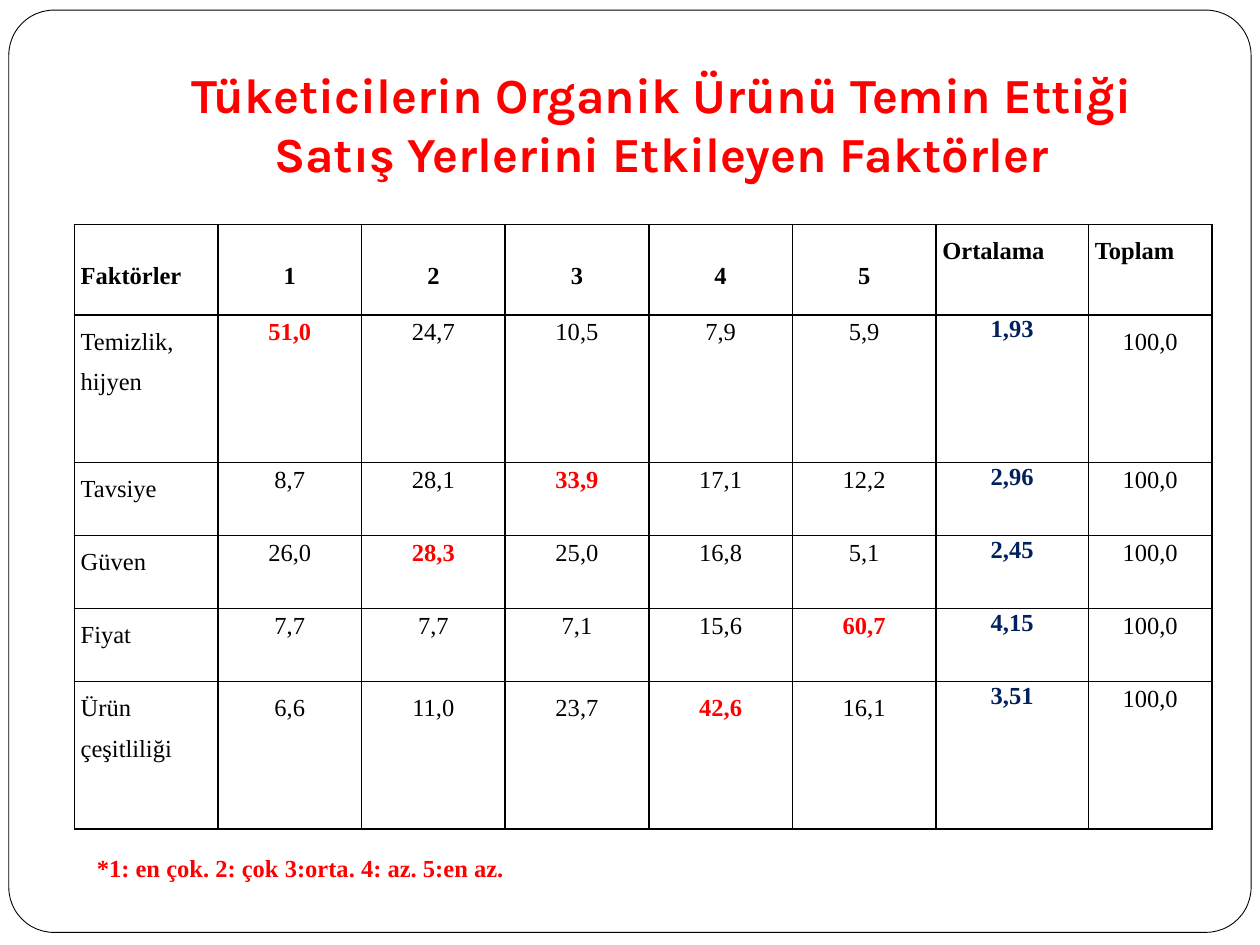
from dataclasses import dataclass

from lxml.etree import SubElement
from pptx import Presentation
from pptx.dml.color import RGBColor
from pptx.enum.shapes import MSO_SHAPE
from pptx.enum.text import MSO_ANCHOR, MSO_AUTO_SIZE, PP_ALIGN
from pptx.oxml.ns import qn
from pptx.util import Inches, Pt


@dataclass(frozen=True)
class Theme:
    black: RGBColor = RGBColor(0x00, 0x00, 0x00)
    white: RGBColor = RGBColor(0xFF, 0xFF, 0xFF)
    red: RGBColor = RGBColor(0xFF, 0x00, 0x00)
    navy: RGBColor = RGBColor(0x00, 0x20, 0x60)
    title_font: str = "Karla"
    body_font: str = "Times New Roman"
    title_size: int = 28
    body_size: int = 14


@dataclass(frozen=True)
class Factor:
    name: str
    shares: tuple[float, ...]
    mean: float
    height: float = 0.58
    share_spacing: float = 1.15
    total_spacing: float = 1.15


@dataclass(frozen=True)
class CellStyle:
    align: PP_ALIGN = PP_ALIGN.CENTER
    spacing: float | Pt = 1.5
    color: RGBColor = Theme.black
    bold: bool = False
    anchor: MSO_ANCHOR = MSO_ANCHOR.TOP
    filled: bool = False


THEME = Theme()
HEADERS = ("Faktörler", "1", "2", "3", "4", "5", "Ortalama", "Toplam")
COL_WIDTHS = (1.14,) * 6 + (1.21, 0.98)
HEADER_HEIGHT = 0.72
FACTORS = (
    Factor("Temizlik, hijyen", (51.0, 24.7, 10.5, 7.9, 5.9), 1.93,
           height=1.17, total_spacing=1.5),
    Factor("Tavsiye", (8.7, 28.1, 33.9, 17.1, 12.2), 2.96),
    Factor("Güven", (26.0, 28.3, 25.0, 16.8, 5.1), 2.45),
    Factor("Fiyat", (7.7, 7.7, 7.1, 15.6, 60.7), 4.15),
    Factor("Ürün çeşitliliği", (6.6, 11.0, 23.7, 42.6, 16.1), 3.51,
           height=1.17, share_spacing=1.5),
)


def decimal_comma(value: float, digits: int = 1) -> str:
    return f"{value:.{digits}f}".replace(".", ",")


def format_runs(p, font: str, size: int, color: RGBColor, bold: bool) -> None:
    for r in p.runs:
        r.font.name = font
        r.font.size = Pt(size)
        r.font.color.rgb = color
        r.font.bold = bold


def add_borders(cell) -> None:
    """Draw a 1 pt black line on all four sides; the lines precede the fill."""
    tc_pr = cell._tc.get_or_add_tcPr()
    for i, side in enumerate(("lnL", "lnR", "lnT", "lnB")):
        ln = SubElement(tc_pr, qn(f"a:{side}"), w=str(Pt(1)))
        fill = SubElement(ln, qn("a:solidFill"))
        SubElement(fill, qn("a:srgbClr"), val=str(THEME.black))
        tc_pr.insert(i, ln)


def write_cell(cell, text: str, style: CellStyle) -> None:
    cell.margin_left = cell.margin_right = Inches(0.05)
    cell.margin_top = cell.margin_bottom = 0
    cell.vertical_anchor = style.anchor
    if style.filled:
        cell.fill.solid()
        cell.fill.fore_color.rgb = THEME.white
    else:
        cell.fill.background()
    add_borders(cell)
    p = cell.text_frame.paragraphs[0]
    p.text = text
    p.alignment = style.align
    p.line_spacing = style.spacing
    p.space_after = Pt(10)
    format_runs(p, THEME.body_font, THEME.body_size, style.color, style.bold)


def write_header(table) -> None:
    for col, text in enumerate(HEADERS):
        write_cell(table.cell(0, col), text, CellStyle(
            align=PP_ALIGN.CENTER if text.isdigit() else PP_ALIGN.JUSTIFY,
            anchor=MSO_ANCHOR.MIDDLE if col < 6 else MSO_ANCHOR.TOP,
            bold=True))


def write_factor(table, row: int, factor: Factor) -> None:
    """Fill one row, with the largest share in bold red."""
    write_cell(table.cell(row, 0), factor.name,
               CellStyle(align=PP_ALIGN.LEFT, filled=True))
    for col, share in enumerate(factor.shares, start=1):
        top = share == max(factor.shares)
        write_cell(table.cell(row, col), decimal_comma(share), CellStyle(
            spacing=factor.share_spacing, bold=top,
            color=THEME.red if top else THEME.black))
    write_cell(table.cell(row, 6), decimal_comma(factor.mean, 2),
               CellStyle(spacing=Pt(16), color=THEME.navy, bold=True))
    write_cell(table.cell(row, 7), decimal_comma(100),
               CellStyle(spacing=factor.total_spacing))


def add_frame(slide) -> None:
    sp = slide.shapes.add_shape(MSO_SHAPE.ROUNDED_RECTANGLE, Inches(0.07),
                                Inches(0.08), Inches(9.86), Inches(7.32))
    sp.adjustments[0] = 0.049
    sp.shadow.inherit = False
    sp.fill.solid()
    sp.fill.fore_color.rgb = THEME.white
    sp.line.color.rgb = THEME.black
    sp.line.width = Pt(0.5)
    slide.shapes._spTree.insert(2, sp._element)  # behind the title


def set_title(slide, text: str) -> None:
    sp = slide.shapes.title
    sp.left, sp.top = Inches(1), Inches(0.3)
    sp.width, sp.height = Inches(8.5), Inches(1.25)
    tf = sp.text_frame
    tf.text = text
    tf.word_wrap = True
    tf.auto_size = MSO_AUTO_SIZE.NONE
    tf.vertical_anchor = MSO_ANCHOR.BOTTOM
    tf.margin_bottom = Inches(0.1)
    p = tf.paragraphs[0]
    p.alignment = PP_ALIGN.CENTER
    format_runs(p, THEME.title_font, THEME.title_size, THEME.red, True)


def add_factor_table(slide) -> None:
    heights = (HEADER_HEIGHT, *(factor.height for factor in FACTORS))
    table = slide.shapes.add_table(
        len(heights), len(HEADERS), Inches(0.59), Inches(1.78),
        Inches(sum(COL_WIDTHS)), Inches(sum(heights))).table
    table.first_row = table.horz_banding = False
    for column, width in zip(table.columns, COL_WIDTHS):
        column.width = Inches(width)
    for row, height in zip(table.rows, heights):
        row.height = Inches(height)
    write_header(table)
    for i, factor in enumerate(FACTORS, start=1):
        write_factor(table, i, factor)


def add_scale_note(slide, text: str) -> None:
    sp = slide.shapes.add_textbox(Inches(0.67), Inches(6.72),
                                  Inches(9.33), Inches(0.34))
    tf = sp.text_frame
    tf.text = text
    tf.word_wrap = True
    tf.auto_size = MSO_AUTO_SIZE.SHAPE_TO_FIT_TEXT
    tf.vertical_anchor = MSO_ANCHOR.MIDDLE
    p = tf.paragraphs[0]
    p.alignment = PP_ALIGN.JUSTIFY
    format_runs(p, THEME.body_font, THEME.body_size, THEME.red, True)


def main() -> None:
    prs = Presentation()
    prs.slide_width, prs.slide_height = Inches(10), Inches(7.5)
    slide = prs.slides.add_slide(prs.slide_layouts[5])
    add_frame(slide)
    set_title(slide, "Tüketicilerin Organik Ürünü Temin Ettiği "
                     "Satış Yerlerini Etkileyen Faktörler")
    add_factor_table(slide)
    add_scale_note(slide, "*1: en çok. 2: çok 3:orta. 4: az. 5:en az.")
    prs.save("out.pptx")


if __name__ == "__main__":
    main()
